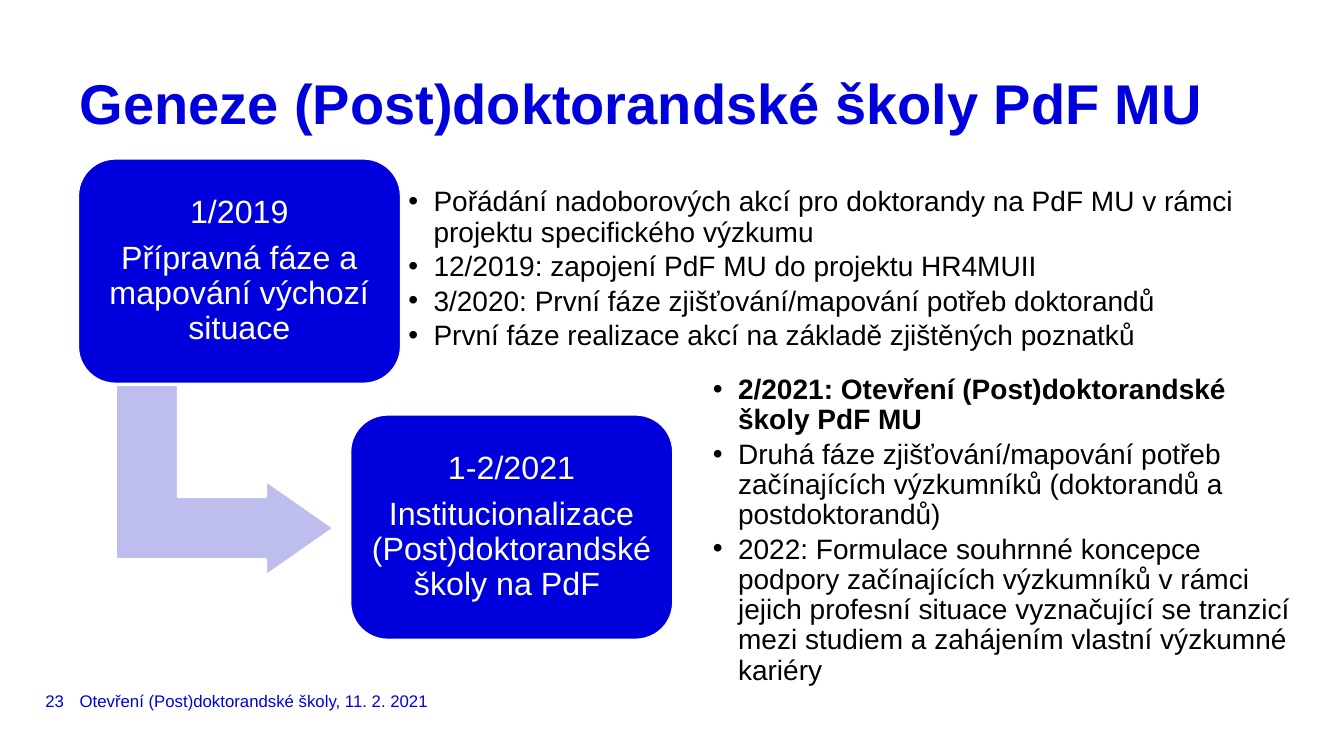
from lxml import etree
from pptx import Presentation
from pptx.dml.color import RGBColor
from pptx.enum.shapes import MSO_SHAPE
from pptx.enum.text import MSO_ANCHOR, PP_ALIGN
from pptx.oxml.ns import qn
from pptx.util import Pt

ROUND_RECT = MSO_SHAPE.ROUNDED_RECTANGLE
BENT_ARROW = MSO_SHAPE.BENT_UP_ARROW
TOP, MIDDLE = MSO_ANCHOR.TOP, MSO_ANCHOR.MIDDLE
LEFT, CENTER = PP_ALIGN.LEFT, PP_ALIGN.CENTER

PX = 9144  # 100 px to the inch
BLANK = 6


class Theme:
    font = "Arial"
    blue = RGBColor(0x00, 0x00, 0xDC)
    pale = RGBColor(0xBD, 0xBD, 0xEE)
    white = RGBColor(0xFF, 0xFF, 0xFF)
    black = RGBColor(0x00, 0x00, 0x00)
    title, card, body, footer = Pt(40), Pt(23), Pt(20), Pt(12)
    outline = Pt(2)


CARD_W, CARD_H = 321, 224
BULLET_INDENT = 25

# Each phase: card position, card text, bullet box, bullets, number of bold bullets
PHASES = [
    ((77, 157),
     ["1/2019", "Přípravná fáze a mapování výchozí situace"],
     (397, 157, 873, 221),
     ["Pořádání nadoborových akcí pro doktorandy na PdF MU v rámci "
      "projektu specifického výzkumu",
      "12/2019: zapojení PdF MU do projektu HR4MUII",
      "3/2020: První fáze zjišťování/mapování potřeb doktorandů",
      "První fáze realizace akcí na základě zjištěných poznatků"], 0),
    ((347, 411),
     ["1-2/2021", "Institucionalizace (Post)doktorandské školy na PdF "],
     (699, 418, 595, 217),
     ["2/2021: Otevření (Post)doktorandské školy PdF MU",
      "Druhá fáze zjišťování/mapování potřeb začínajících výzkumníků "
      "(doktorandů a postdoktorandů)",
      "2022: Formulace souhrnné koncepce podpory začínajících výzkumníků "
      "v rámci jejich profesní situace vyznačující se tranzicí mezi studiem "
      "a zahájením vlastní výzkumné kariéry"], 1),
]


def px(*values):
    return [v * PX for v in values]


def apply(obj, formats):
    for name, value in formats.items():
        setattr(obj, name, value)


def set_frame(tf, inset=0, anchor=MIDDLE, wrap=True):
    apply(tf, dict(word_wrap=wrap, vertical_anchor=anchor))
    for side in ("left", "top", "right", "bottom"):
        setattr(tf, f"margin_{side}", inset * PX)


def add_bullet(p):
    pPr = p._p.get_or_add_pPr()
    pPr.set("marL", str(BULLET_INDENT * PX))
    pPr.set("indent", str(-BULLET_INDENT * PX))
    etree.SubElement(pPr, qn("a:buFont")).set("typeface", Theme.font)
    etree.SubElement(pPr, qn("a:buChar")).set("char", "•")


def write(tf, lines, size, color, para, bullets=False, bold=0):
    """Fill a text frame; the first `bold` lines are bold."""
    for i, line in enumerate(lines):
        p = tf.add_paragraph() if i else tf.paragraphs[0]
        if bullets:
            add_bullet(p)
        apply(p, para)
        r = p.add_run()
        r.text = line
        apply(r.font, dict(name=Theme.font, size=size, bold=i < bold))
        r.font.color.rgb = color


def add_text(s, box, lines, size, color, para=None, frame=None, **style):
    tf = s.shapes.add_textbox(*px(*box)).text_frame
    set_frame(tf, **(frame or {}))
    write(tf, lines, size, color, para or dict(alignment=LEFT), **style)


def add_block(s, kind, box, fill, adjustments):
    sp = s.shapes.add_shape(kind, *px(*box))
    sp.shadow.inherit = False
    sp.fill.solid()
    sp.fill.fore_color.rgb = fill
    sp.line.color.rgb = Theme.white
    sp.line.width = Theme.outline
    for i, value in enumerate(adjustments):
        sp.adjustments[i] = value
    return sp


def add_card(s, pos, lines):
    sp = add_block(s, ROUND_RECT, (*pos, CARD_W, CARD_H), Theme.blue, [0.167])
    set_frame(sp.text_frame, inset=10)
    write(sp.text_frame, lines, Theme.card, Theme.white,
          dict(alignment=CENTER, line_spacing=0.9, space_after=Pt(8)))


def main():
    prs = Presentation()
    prs.slide_width, prs.slide_height = px(1333, 750)
    s = prs.slides.add_slide(prs.slide_layouts[BLANK])

    # Footer and slide number
    add_text(s, (79, 681, 866, 28),
             ["Otevření (Post)doktorandské školy, 11. 2. 2021"],
             Theme.footer, Theme.blue)
    add_text(s, (45, 681, 28, 28), ["23"], Theme.footer, Theme.blue,
             frame=dict(wrap=False))

    # Title
    add_text(s, (79, 79, 1176, 49), ["Geneze (Post)doktorandské školy PdF MU"],
             Theme.title, Theme.blue, dict(line_spacing=Pt(40)),
             dict(anchor=TOP), bold=1)

    # Arrow from the first phase to the second
    arrow = add_block(s, BENT_ARROW, (128, 368, 190, 217), Theme.pale,
                      [0.328, 0.25, 0.358])
    arrow.rotation = 90

    # Phases with their bullets
    for pos, card, box, items, bold in PHASES:
        add_card(s, pos, card)
        add_text(s, box, items, Theme.body, Theme.black,
                 dict(line_spacing=0.9, space_after=Pt(3)),
                 dict(inset=8), bullets=True, bold=bold)

    prs.save("out.pptx")


if __name__ == "__main__":
    main()
